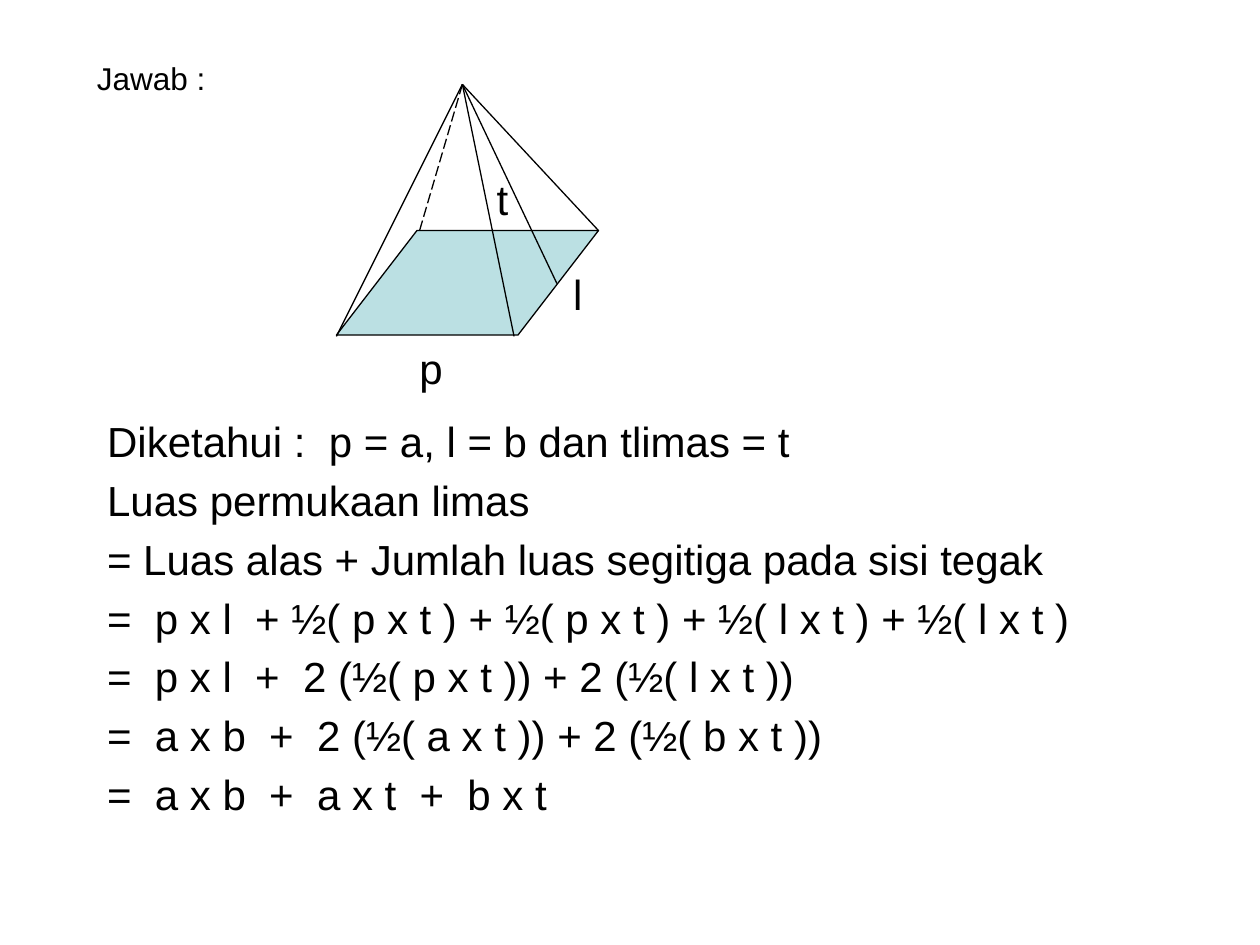
"""Build a slide that works out the surface area of a pyramid."""
from lxml.etree import SubElement
from pptx import Presentation
from pptx.dml.color import RGBColor
from pptx.enum.dml import MSO_LINE_DASH_STYLE as Dash
from pptx.enum.shapes import MSO_CONNECTOR as Link, MSO_SHAPE as Shape
from pptx.enum.text import MSO_AUTO_SIZE as Fit
from pptx.oxml.ns import qn
from pptx.util import Inches, Pt

theme = {
    "ink": RGBColor(0, 0, 0),
    "base": RGBColor(0xBB, 0xE0, 0xE3),
    "line": Pt(0.75),
    "text": {"name": "Arial", "size": Pt(24)},
    "head": {"name": "Arial", "size": Pt(18)},
}


def write(para, text, style):
    run = para.add_run()
    run.text = text
    for key, value in theme[style].items():
        setattr(run.font, key, value)
    run.font.color.rgb = theme["ink"]


def stroke(line):
    line.color.rgb = theme["ink"]
    line.width = theme["line"]


deck = Presentation()
deck.slide_width, deck.slide_height = Inches(10), Inches(7.5)
slide = deck.slides.add_slide(deck.slide_layouts[1])
shapes = slide.shapes
title = shapes.title.element
title.getparent().remove(title)

body = slide.placeholders[1]
place = {"left": 0.75, "top": 3.25, "width": 9.08, "height": 3.67}
for key, value in place.items():
    setattr(body, key, Inches(value))
frame = body.text_frame
frame.auto_size = Fit.NONE
steps = [
    "Diketahui :  p = a, l = b dan tlimas = t",
    "Luas permukaan limas",
    "= Luas alas + Jumlah luas segitiga pada sisi tegak",
    "=  p x l  + ½( p x t ) + ½( p x t ) + ½( l x t ) + ½( l x t )",
    "=  p x l  +  2 (½( p x t )) + 2 (½( l x t ))",
    "=  a x b  +  2 (½( a x t )) + 2 (½( b x t ))",
    "=  a x b  +  a x t  +  b x t",
]
for i, step in enumerate(steps):
    para = frame.add_paragraph() if i else frame.paragraphs[0]
    write(para, step, "text")
    SubElement(para._p.get_or_add_pPr(), qn("a:buNone"))

base = shapes.add_shape(
    Shape.PARALLELOGRAM, Inches(2.67), Inches(1.83), Inches(2.08), Inches(0.83)
)
base.adjustments[0] = 0.77
base.shadow.inherit = False
base.fill.solid()
base.fill.fore_color.rgb = theme["base"]
stroke(base.line)

apex = Inches(3.67), Inches(0.67)
edges = [
    (4.08, 2.67, None),
    (3.33, 1.83, Dash.LONG_DASH),
    (2.67, 2.67, None),
    (4.75, 1.83, None),
    (4.42, 2.25, None),
]
for x, y, dash in edges:
    edge = shapes.add_connector(Link.STRAIGHT, *apex, Inches(x), Inches(y))
    stroke(edge.line)
    edge.line.dash_style = dash
    SubElement(edge.element.spPr, qn("a:effectLst"))

labels = [
    ("Jawab :", 0.67, 0.42, 5.93, 0.63, "head", True),
    ("p", 3.23, 2.67, 0.39, 0.5, "text", False),
    ("l", 4.45, 2.08, 0.28, 0.5, "text", False),
    (" t", 3.75, 1.33, 0.39, 0.5, "text", False),
]
for text, x, y, wide, high, style, wrap in labels:
    box = shapes.add_textbox(Inches(x), Inches(y), Inches(wide), Inches(high))
    box.text_frame.word_wrap = wrap
    box.text_frame.auto_size = Fit.SHAPE_TO_FIT_TEXT
    write(box.text_frame.paragraphs[0], text, style)

deck.save("out.pptx")
